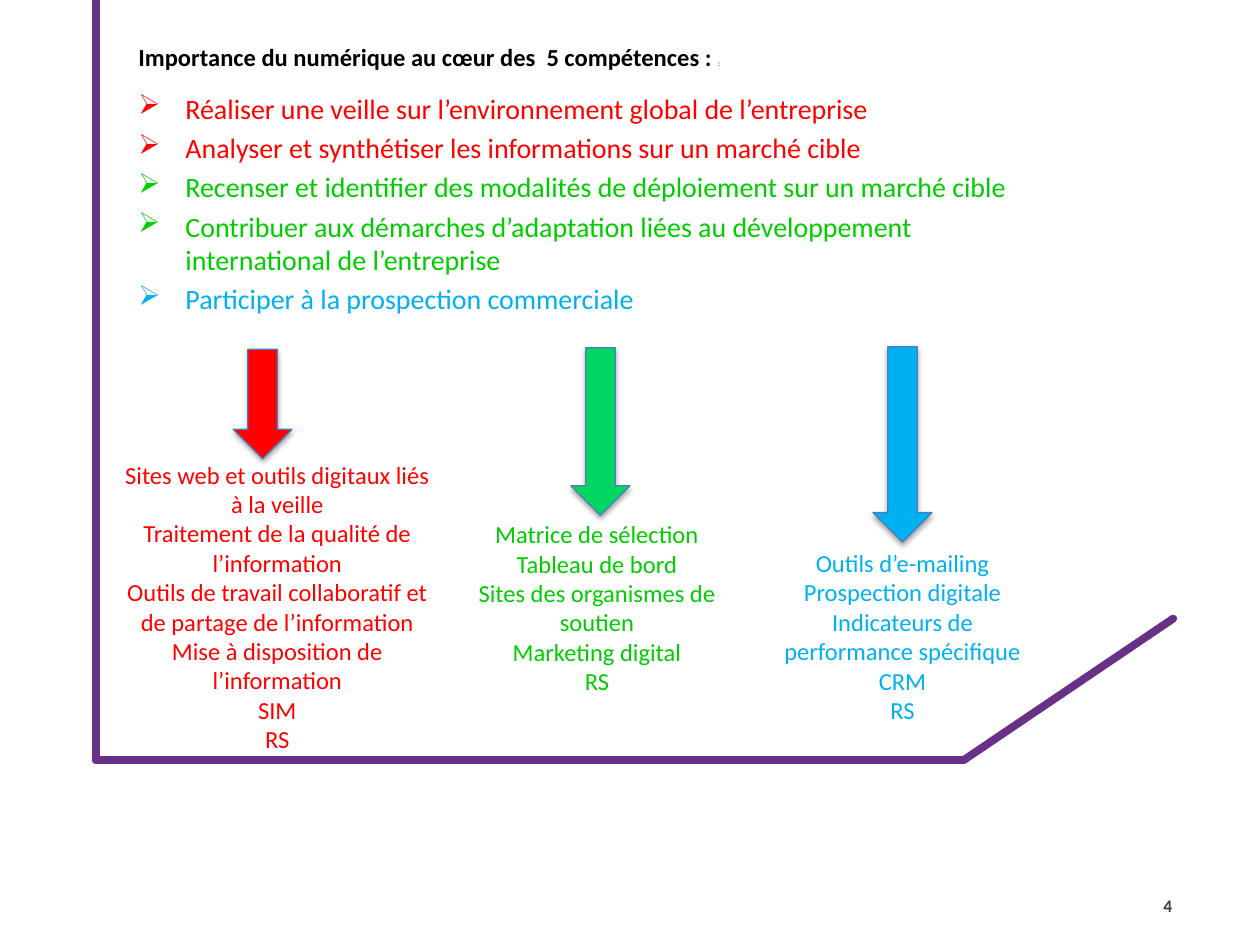
from itertools import pairwise

from lxml import etree
from pptx import Presentation
from pptx import util as u
from pptx.dml.color import RGBColor
from pptx.enum import shapes, text
from pptx.oxml import ns

BLACK = RGBColor(0x00, 0x00, 0x00)
GREY = RGBColor(0x40, 0x40, 0x40)
PURPLE = RGBColor(0x68, 0x30, 0x86)
OUTLINE = RGBColor(0x4B, 0x7E, 0xBC)
RED = RGBColor(0xFF, 0x00, 0x00)
GREEN = RGBColor(0x00, 0xCC, 0x00)
ARROW_GREEN = RGBColor(0x00, 0xD6, 0x61)
BLUE = RGBColor(0x00, 0xB0, 0xF0)

FRAME = [(1.93, 0), (1.93, 15.32), (19.43, 15.32), (23.65, 12.47)]
ARROW_WIDTH = 1.19

SKILLS = [
    ("Réaliser une veille sur l’environnement global de l’entreprise", RED),
    ("Analyser et synthétiser les informations sur un marché cible", RED),
    ("Recenser et identifier des modalités de déploiement sur un marché cible", GREEN),
    ("Contribuer aux démarches d’adaptation liées au développement "
     "international de l’entreprise", GREEN),
    ("Participer à la prospection commerciale", BLUE),
]

TOOLS = [
    ((4.7, 7.04, ARROW_WIDTH, 2.21), RED, (2.11, 9.14, 6.96, 6.25), RED,
     ["Sites web et outils digitaux liés à la veille",
      "Traitement de la qualité de l’information",
      "Outils de travail collaboratif et de partage de l’information",
      "Mise à disposition de l’information", "SIM", "RS"]),
    ((11.51, 7.01, ARROW_WIDTH, 3.38), ARROW_GREEN, (9.04, 10.34, 5.99, 4.45), GREEN,
     ["Matrice de sélection", "Tableau de bord", "Sites des organismes de soutien",
      "Marketing digital", "RS"]),
    ((17.6, 6.99, ARROW_WIDTH, 3.94), BLUE, (15.49, 10.92, 5.41, 3.84), BLUE,
     ["Outils d’e-mailing", "Prospection digitale",
      "Indicateurs de performance spécifique", "CRM", "RS"]),
]


class SlideBuilder:
    font_name = "Calibri"

    def __init__(self, page):
        self.page = page

    def style(self, para, size, color, bold=False):
        para.font.name = self.font_name
        para.font.size = u.Pt(size)
        para.font.bold = bold
        para.font.color.rgb = color

    def frame_line(self, start, end):
        line = self.page.shapes.add_connector(
            shapes.MSO_CONNECTOR.STRAIGHT, *map(u.Cm, start + end))
        line.line.color.rgb = PURPLE
        line.line.width = u.Pt(4.5)
        line.line._get_or_add_ln().set("cap", "rnd")
        etree.SubElement(line._element.spPr, ns.qn("a:effectLst"))

    def down_arrow(self, place, color):
        arrow = self.page.shapes.add_shape(shapes.MSO_SHAPE.DOWN_ARROW, *map(u.Cm, place))
        arrow.fill.solid()
        arrow.fill.fore_color.rgb = color
        arrow.line.color.rgb = OUTLINE
        arrow.line.width = u.Pt(0.75)
        arrow.shadow.inherit = False
        effects = arrow._element.spPr.find(ns.qn("a:effectLst"))
        shadow = etree.SubElement(
            effects, ns.qn("a:outerShdw"), blurRad=str(u.Pt(3.1)), dist=str(u.Pt(1.8)),
            dir="5400000", rotWithShape="0")
        shade = etree.SubElement(shadow, ns.qn("a:srgbClr"), val=str(BLACK))
        etree.SubElement(shade, ns.qn("a:alpha"), val="35000")

    def text_frame(self, place):
        box = self.page.shapes.add_textbox(*map(u.Cm, place))
        box.text_frame.word_wrap = True
        return box.text_frame

    def text_box(self, place, lines, size, color, align, bold=False):
        frame = self.text_frame(place)
        for index, line in enumerate(lines):
            para = frame.add_paragraph() if index else frame.paragraphs[0]
            para.text = line
            para.alignment = align
            self.style(para, size, color, bold)
        return frame

    def skill_list(self, place, title, skills):
        frame = self.text_frame(place)
        heading = frame.paragraphs[0]
        heading.line_spacing = 0.87
        heading.space_after = u.Pt(8)
        heading.font.name = self.font_name
        heading.font.color.rgb = BLACK
        for words, size, bold in ((title, 14, True), (":", 4.5, False)):
            span = heading.add_run()
            span.text = words
            span.font.size = u.Pt(size)
            span.font.bold = bold
        for skill, color in skills:
            para = frame.add_paragraph()
            para.text = skill
            para.space_before = u.Pt(3.2)
            props = para._p.get_or_add_pPr()
            props.set("marL", str(u.Cm(0.95)))
            props.set("indent", str(-u.Cm(0.95)))
            etree.SubElement(props, ns.qn("a:buChar"), char="➢")
            self.style(para, 16, color)


def main():
    deck = Presentation()
    deck.slide_width, deck.slide_height = u.Cm(25.4), u.Cm(19.05)
    builder = SlideBuilder(deck.slides.add_slide(deck.slide_layouts[6]))

    for start, end in pairwise(FRAME):
        builder.frame_line(start, end)
    builder.skill_list((2.54, 0.81, 18.8, 6.2),
                       "Importance du numérique au cœur des  5 compétences : ", SKILLS)
    for arrow_place, arrow_color, box_place, color, lines in TOOLS:
        builder.down_arrow(arrow_place, arrow_color)
        builder.text_box(box_place, lines, 14, color, text.PP_ALIGN.CENTER)
    number = builder.text_box((22.76, 17.75, 1.12, 1.02), ["4"], 10, GREY,
                              text.PP_ALIGN.RIGHT, bold=True)
    number.vertical_anchor = text.MSO_ANCHOR.MIDDLE

    deck.save("out.pptx")


if __name__ == "__main__":
    main()
